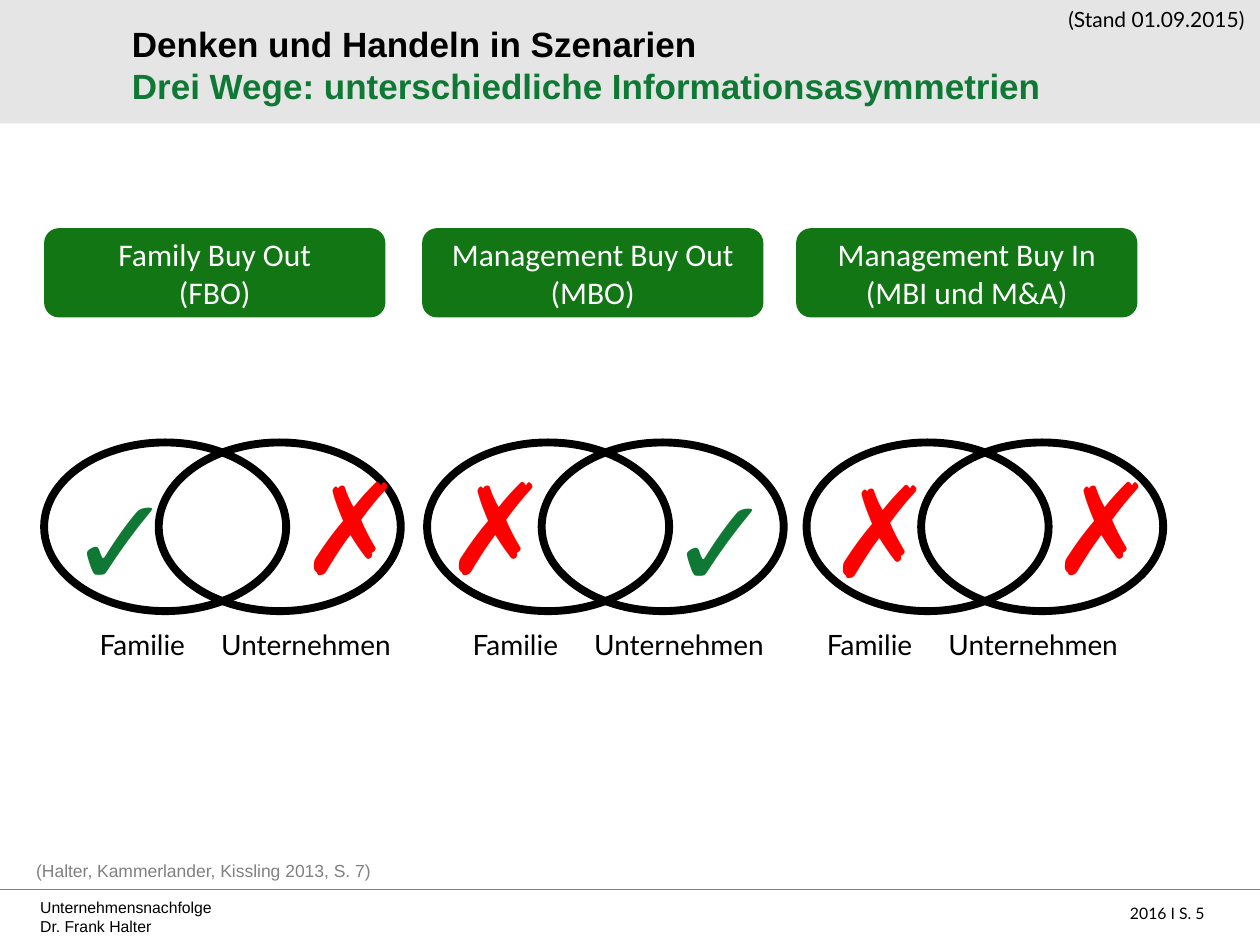
from lxml import etree
from pptx import Presentation
from pptx.dml.color import RGBColor
from pptx.enum.shapes import MSO_CONNECTOR, MSO_SHAPE
from pptx.enum.text import MSO_ANCHOR, PP_ALIGN
from pptx.oxml.ns import qn
from pptx.util import Cm, Pt

LEFT, CENTER, RIGHT = PP_ALIGN.LEFT, PP_ALIGN.CENTER, PP_ALIGN.RIGHT
TOP, MIDDLE, BOTTOM = MSO_ANCHOR.TOP, MSO_ANCHOR.MIDDLE, MSO_ANCHOR.BOTTOM
RECT, ROUNDED, OVAL = MSO_SHAPE.RECTANGLE, MSO_SHAPE.ROUNDED_RECTANGLE, MSO_SHAPE.OVAL

COLORS = {"black": "000000", "white": "FFFFFF", "band": "E5E5E5", "box": "117613",
          "green": "0F7835", "red": "FF0000", "source": "808080", "rule": "7F7F7F"}

# Content; positions in cm
TITLE = ["Denken und Handeln in Szenarien",
         "Drei Wege: unterschiedliche Informationsasymmetrien"]
STATUS = "(Stand 01.09.2015)"
SOURCE = "(Halter, Kammerlander, Kissling 2013, S. 7)"
FOOTER = ["Unternehmensnachfolge", "Dr. Frank Halter"]
PAGE = "2016 I S. 5"
CIRCLES = "Familie\tUnternehmen"
WAYS = [
    {"name": ["Family Buy Out", "(FBO)"], "box": 0.89, "venn": 0.89, "label": 0.91,
     "marks": [("✓", 1.14, 9.17), ("✗", 5.79, 8.92)]},
    {"name": ["Management Buy Out", "(MBO)"], "box": 8.51, "venn": 8.61, "label": 8.43,
     "marks": [("✗", 8.71, 8.92), ("✓", 13.23, 9.19)]},
    {"name": ["Management Buy In", "(MBI und M&A)"], "box": 16.05, "venn": 16.26, "label": 15.57,
     "marks": [("✗", 16.46, 8.97), ("✗", 20.93, 8.92)]},
]
MARKS = {"✓": ("green", 2.54), "✗": ("red", 2.13)}  # colour, width
VENN_SHIFT = 2.31
LABEL_INSET, LABEL_TAB = 1.1, 2.45

prs = Presentation()
prs.slide_width, prs.slide_height = Cm(25.4), Cm(19.05)
s = prs.slides.add_slide(prs.slide_layouts[6])


def rgb(name):
    return RGBColor.from_string(COLORS[name])


def write(sp, lines, size, font, color="black", align=LEFT, anchor=TOP, bold=False):
    tf = sp.text_frame
    tf.text = "\n".join(lines)
    tf.vertical_anchor = anchor
    for p in tf.paragraphs:
        p.alignment = align
        for r in p.runs:
            r.font.size, r.font.name, r.font.bold = Pt(size), font, bold
            r.font.color.rgb = rgb(color)
    return tf


def add_text(x, y, w, h, lines, size, font, wrap=True, **style):
    sp = s.shapes.add_textbox(Cm(x), Cm(y), Cm(w), Cm(h))
    sp.text_frame.word_wrap = wrap
    return write(sp, lines, size, font, **style)


def add_shape(kind, x, y, w, h, fill=None, line=None, width=4.5):
    sp = s.shapes.add_shape(kind, Cm(x), Cm(y), Cm(w), Cm(h))
    sp.shadow.inherit = False
    if fill:
        sp.fill.solid()
        sp.fill.fore_color.rgb = rgb(fill)
    else:
        sp.fill.background()
    if line:
        sp.line.color.rgb = rgb(line)
        sp.line.width = Pt(width)
    else:
        sp.line.fill.background()
    return sp


# Footer
tf = add_text(20.14, 18.01, 4.39, 0.71, [PAGE], 9, "Lato", align=RIGHT)
tf.paragraphs[0].line_spacing = 1.2
rule = s.shapes.add_connector(MSO_CONNECTOR.STRAIGHT, 0, Cm(17.93), prs.slide_width, Cm(17.93))
rule.line.color.rgb = rgb("rule")
rule.line.width = Pt(0.25)
etree.SubElement(rule._element.spPr, qn("a:effectLst"))
tf = add_text(0.76, 18.06, 13.84, 0.86, FOOTER, 9, "Arial", anchor=BOTTOM)
tf.margin_left = tf.margin_right = tf.margin_top = tf.margin_bottom = Cm(0.05)

# Header and source
add_shape(RECT, 0, 0, 25.4, 2.49, fill="band")
tf = add_text(2.41, 0.3, 21.95, 2.01, TITLE, 20, "Arial", anchor=MIDDLE, bold=True)
tf.paragraphs[1].runs[0].font.color.rgb = rgb("green")
add_text(0.48, 17.12, 22.58, 0.76, [SOURCE], 10, "Arial", color="source", anchor=BOTTOM)
add_text(21.23, 0, 4.17, 0.76, [STATUS], 12, "Lato", wrap=False, align=CENTER)

# Three ways: heading, overlapping circles, captions and marks
for way in WAYS:
    box = add_shape(ROUNDED, way["box"], 4.6, 6.88, 1.8, fill="box")
    write(box, way["name"], 18, "Calibri", color="white", align=CENTER, anchor=MIDDLE)
    for i in range(2):
        add_shape(OVAL, way["venn"] + i * VENN_SHIFT, 8.92, 4.88, 3.4, line="black")

    tf = add_text(way["label"], 12.52, 8.08, 0.94, [CIRCLES], 16, "Lato")
    tf.margin_left = Cm(LABEL_INSET)
    tabs = etree.SubElement(tf.paragraphs[0]._p.get_or_add_pPr(), qn("a:tabLst"))
    etree.SubElement(tabs, qn("a:tab"), pos=str(Cm(LABEL_TAB)), algn="l")

    for mark, x, y in way["marks"]:
        color, width = MARKS[mark]
        add_text(x, y, width, 3.33, [mark], 72, "Lato", wrap=False, color=color, align=CENTER)

prs.save("out.pptx")
